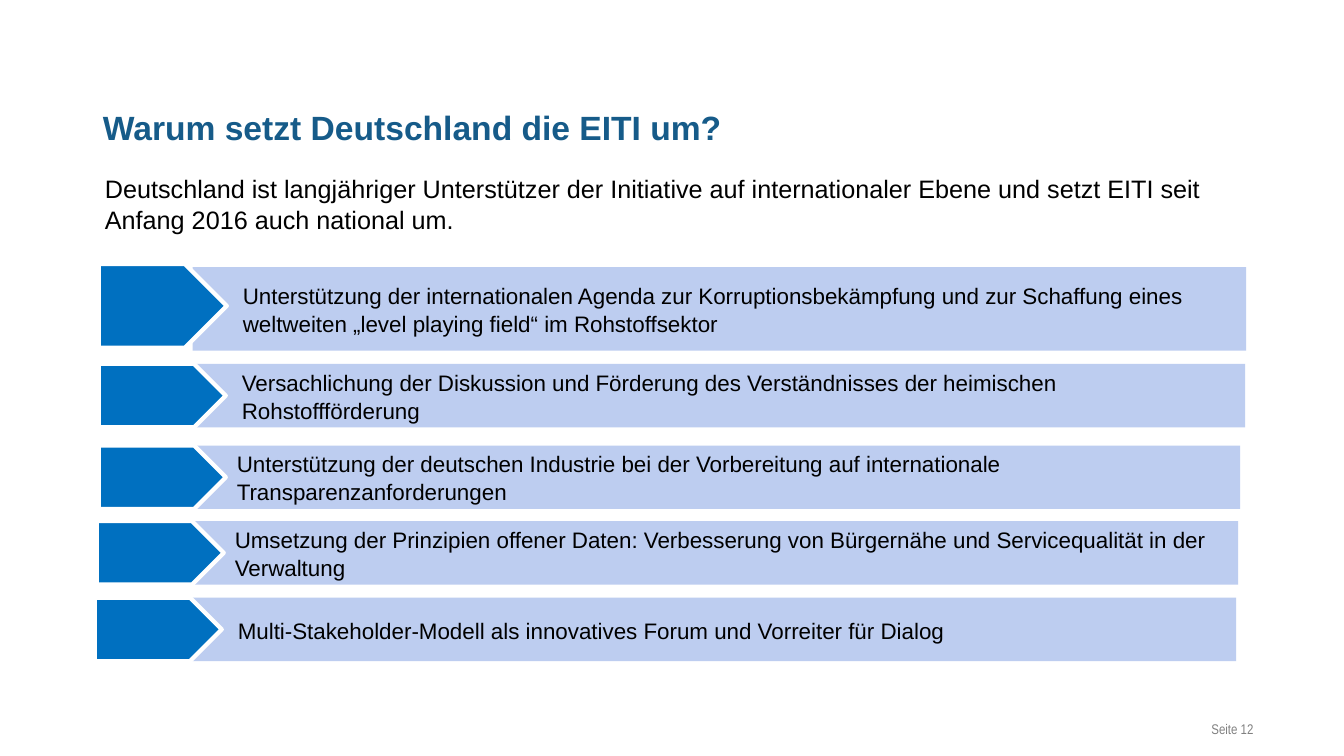
"""Build the slide on why Germany implements the EITI."""
from dataclasses import dataclass

from lxml import etree
from pptx import Presentation
from pptx.dml.color import RGBColor
from pptx.enum.shapes import MSO_SHAPE
from pptx.enum.text import MSO_ANCHOR, MSO_AUTO_SIZE, PP_ALIGN
from pptx.oxml.ns import qn
from pptx.util import Inches, Pt

RECT, PLATE = MSO_SHAPE.RECTANGLE, MSO_SHAPE.PENTAGON
TOP, MIDDLE = MSO_ANCHOR.TOP, MSO_ANCHOR.MIDDLE
LEFT, RIGHT = PP_ALIGN.LEFT, PP_ALIGN.RIGHT
FIXED = MSO_AUTO_SIZE.NONE

NAVY = RGBColor(0x16, 0x5B, 0x89)
BLUE = RGBColor(0x00, 0x70, 0xC0)
PALE = RGBColor(0xBD, 0xCD, 0xF0)
WHITE = RGBColor(0xFF, 0xFF, 0xFF)
BLACK = RGBColor(0x00, 0x00, 0x00)
GRAY = RGBColor(0x80, 0x80, 0x80)

HEAD = {"name": "Arial", "size": Pt(24), "bold": True}
LEAD = {"name": "Arial", "size": Pt(18)}
ITEM = {"name": "Arial", "size": Pt(16)}
FOOT = {"name": "Arial Narrow", "size": Pt(10)}
FLUSH = {"alignment": LEFT}
LOOSE = {"alignment": LEFT, "line_spacing": 1.05, "space_before": Pt(0)}


@dataclass
class Row:
    """One reason: a text bar with an arrow tab at its left."""
    text: str
    bar: float
    tab: float
    top: float
    lift: float = 0
    high: float = 0.63
    tip: float = 1.26
    inset: float = 0.4


ROWS = [
    Row("Unterstützung der internationalen Agenda zur Korruptionsbekämpfung und "
        "zur Schaffung eines weltweiten „level playing field“ im Rohstoffsektor",
        1.91, 0.98, 2.65, lift=0.03, high=0.83, tip=1.27),
    Row("Versachlichung der Diskussion und Förderung des Verständnisses der "
        "heimischen Rohstoffförderung", 1.9, 0.98, 3.61),
    Row("Unterstützung der deutschen Industrie bei der Vorbereitung auf "
        "internationale Transparenzanforderungen", 1.85, 0.98, 4.42),
    Row("Umsetzung der Prinzipien offener Daten: Verbesserung von Bürgernähe "
        "und Servicequalität in der Verwaltung", 1.83, 0.96, 5.17),
    Row("Multi-Stakeholder-Modell als innovatives Forum und Vorreiter für Dialog",
        1.81, 0.94, 5.93, inset=0.45),
]


def apply(target, style: dict) -> None:
    """Set every attribute named in the style."""
    for key, value in style.items():
        setattr(target, key, value)


def place(shape, left: float, top: float, wide: float, high: float) -> None:
    """Move and size a shape, in inches."""
    apply(shape, {"left": Inches(left), "top": Inches(top),
                  "width": Inches(wide), "height": Inches(high)})


def write(shape, text: str, font: dict, color: RGBColor, para: dict,
          anchor=TOP, inset: float = 0) -> None:
    """Fill a shape with one unbulleted paragraph."""
    frame = shape.text_frame
    frame.text = text
    apply(frame, {"word_wrap": True, "auto_size": FIXED,
                  "vertical_anchor": anchor})
    line = frame.paragraphs[0]
    props = line._p.get_or_add_pPr()
    props.set("marL", str(Inches(inset)))
    props.set("indent", "0")
    etree.SubElement(props, qn("a:buNone"))
    apply(line, para)
    apply(line.runs[0].font, font)
    line.runs[0].font.color.rgb = color


def block(slide, kind, box: tuple, fill: RGBColor):
    """Add a flat filled shape without an outline."""
    shape = slide.shapes.add_shape(kind, *map(Inches, box))
    shape.shadow.inherit = False
    shape.fill.solid()
    shape.fill.fore_color.rgb = fill
    shape.line.fill.background()
    return shape


def draw(slide, row: Row) -> None:
    """Draw one reason."""
    bar = block(slide, RECT, (row.bar, row.top, 10.45, row.high), PALE)
    write(bar, row.text, ITEM, BLACK, LOOSE, MIDDLE, row.inset)
    box = (row.tab, row.top - row.lift, row.tip, row.high)
    tab = block(slide, PLATE, box, BLUE)
    tab.line.color.rgb = WHITE
    tab.line.width = Pt(3)


def main() -> None:
    """Build and save the slide."""
    deck = Presentation()
    deck.slide_width, deck.slide_height = Inches(13.33), Inches(7.5)
    slide = deck.slides.add_slide(deck.slide_layouts[1])
    title, body = slide.placeholders
    place(title, 0.92, 1.01, 11.5, 0.78)
    write(title, "Warum setzt Deutschland die EITI um?", HEAD, NAVY, FLUSH)
    place(body, 0.94, 1.65, 11.32, 4.93)
    write(body, "Deutschland ist langjähriger Unterstützer der Initiative auf "
          "internationaler Ebene und setzt EITI seit Anfang 2016 auch national um.",
          LEAD, BLACK, LOOSE)
    for row in ROWS:
        draw(slide, row)
    page = slide.shapes.add_textbox(*map(Inches, (11.53, 7.1, 1, 0.27)))
    write(page, "Seite 12", FOOT, GRAY, {"alignment": RIGHT})
    deck.save("out.pptx")


if __name__ == "__main__":
    main()
